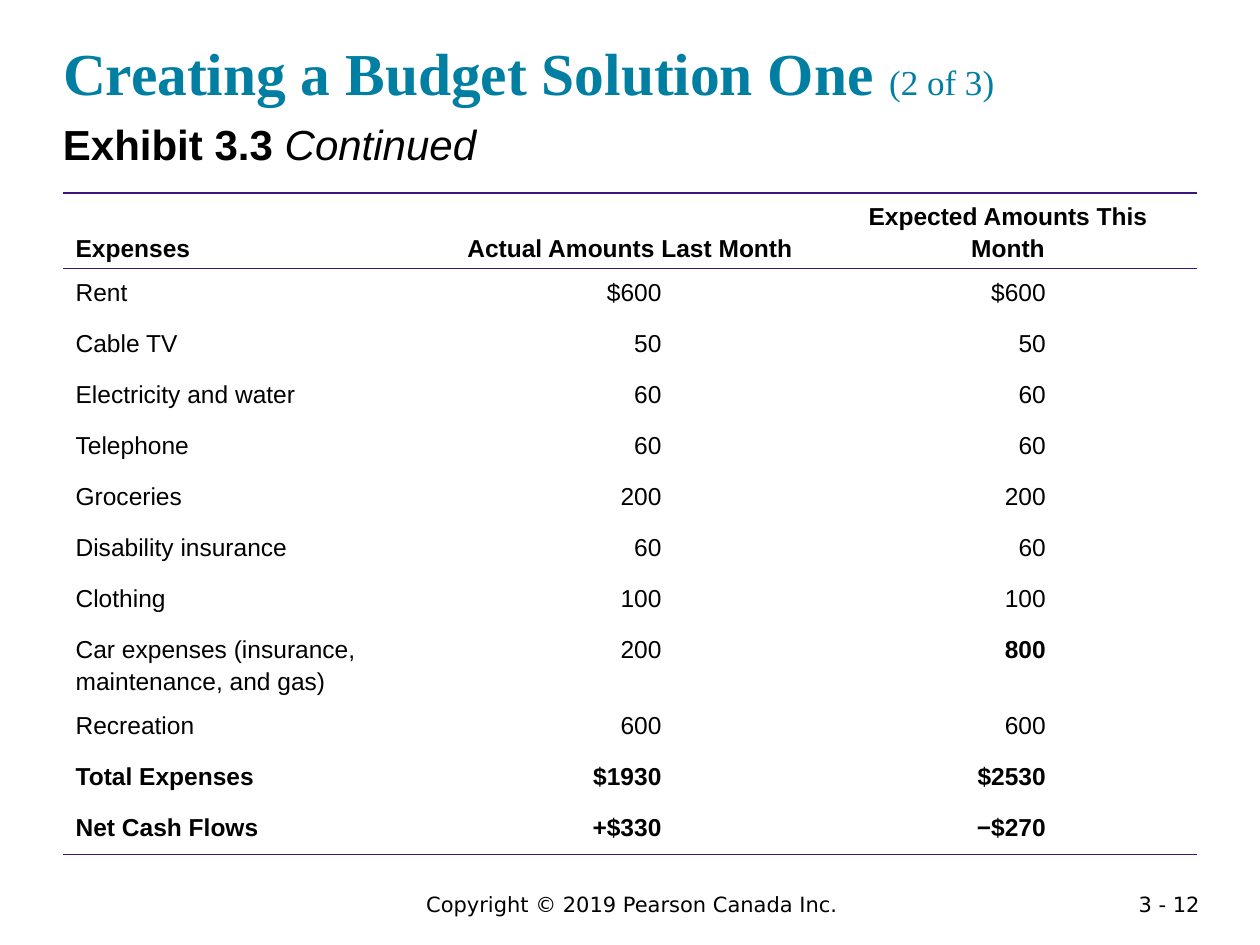
from lxml import etree
from pptx import Presentation
from pptx.dml.color import RGBColor
from pptx.enum.text import MSO_ANCHOR, MSO_AUTO_SIZE, PP_ALIGN
from pptx.oxml.ns import qn
from pptx.util import Inches, Pt

LEFT, CENTER, RIGHT = PP_ALIGN.LEFT, PP_ALIGN.CENTER, PP_ALIGN.RIGHT
TOP, BOTTOM = MSO_ANCHOR.TOP, MSO_ANCHOR.BOTTOM
NO_AUTOFIT = MSO_AUTO_SIZE.NONE
PLAIN_TABLE = "{2D5ABB26-0587-4C30-8999-92F81FD0307C}"

HEADERS = ("Expenses", "Actual Amounts Last Month", "Expected Amounts This Month")
EXPENSES = (
    ("Rent", "$600", "$600"),
    ("Cable TV", "50", "50"),
    ("Electricity and water", "60", "60"),
    ("Telephone", "60", "60"),
    ("Groceries", "200", "200"),
    ("Disability insurance", "60", "60"),
    ("Clothing", "100", "100"),
    ("Car expenses (insurance, maintenance, and gas)", "200", "800"),
    ("Recreation", "600", "600"),
    ("Total Expenses", "$1930", "$2530"),
    ("Net Cash Flows", "+$330", "−$270"),
)
TOTALS = ("Total Expenses", "Net Cash Flows")
CHANGED_AMOUNT = "800"
RIGHT_INSETS = (0.1, 1.25, 1.2)


def color(value):
    return RGBColor.from_string(value)


class BudgetSlide:
    heading_font = "Times New Roman"
    body_font = "Arial"
    footer_font = "DejaVu Sans"
    teal = "007FA3"
    purple = "3C1581"
    black = "000000"

    def __init__(self, deck):
        self.page = deck.slides.add_slide(deck.slide_layouts[5])

    def span(self, para, text, size, font, fill, bold=False, italic=False):
        span = para.add_run()
        span.text = text
        span.font.size = Pt(size)
        span.font.name = font
        span.font.bold = bold
        span.font.italic = italic
        span.font.color.rgb = color(fill)

    def frame(self, box, align, inset):
        frame = box.text_frame
        frame.word_wrap = True
        frame.auto_size = NO_AUTOFIT
        frame.margin_left = frame.margin_right = Inches(inset)
        frame.margin_top = frame.margin_bottom = Inches(inset / 2)
        para = frame.paragraphs[0]
        para.alignment = align
        return frame, para

    def title(self, text, part):
        box = self.page.shapes.title
        box.left, box.top = Inches(0.5), Inches(0.25)
        box.width, box.height = Inches(9), Inches(0.6)
        frame, para = self.frame(box, LEFT, 0)
        frame.vertical_anchor = BOTTOM
        self.span(para, text, 34, self.heading_font, self.teal, bold=True)
        self.span(para, part, 20, self.heading_font, self.teal)

    def text(self, left, top, width, height, align=LEFT, inset=0.1):
        box = self.page.shapes.add_textbox(
            Inches(left), Inches(top), Inches(width), Inches(height))
        return self.frame(box, align, inset)[1]

    def exhibit(self, label, note):
        para = self.text(0.5, 0.94, 9, 0.5, inset=0)
        self.span(para, label, 24, self.body_font, self.black, bold=True)
        self.span(para, note, 24, self.body_font, self.black, italic=True)

    def footer(self, text, left, width, align):
        para = self.text(left, 7.03, width, 0.3, align)
        self.span(para, text, 12, self.footer_font, self.black)

    def rule(self, cell, *sides):
        properties = cell._tc.get_or_add_tcPr()
        for position, side in enumerate(sides):
            line = etree.Element(qn(f"a:{side}"), w=str(Pt(1)))
            fill = etree.SubElement(line, qn("a:solidFill"))
            etree.SubElement(fill, qn("a:srgbClr"), val=self.purple)
            properties.insert(position, line)

    def cell(self, cell, text, align, anchor, bold, right_inset):
        cell.fill.background()
        cell.vertical_anchor = anchor
        cell.margin_right = Inches(right_inset)
        para = cell.text_frame.paragraphs[0]
        para.alignment = align
        para.line_spacing = 1.15
        self.span(para, text, 14, self.body_font, self.black, bold)

    def table(self, headers, rows):
        count = len(rows) + 1
        table = self.page.shapes.add_table(
            count, len(headers), Inches(0.5), Inches(1.53),
            Inches(9), Inches(4.86)).table
        table.first_row = table.horz_banding = False
        table._tbl.tblPr.find(qn("a:tableStyleId")).text = PLAIN_TABLE
        for column, header in enumerate(headers):
            cell = table.cell(0, column)
            self.cell(cell, header, CENTER if column else LEFT, BOTTOM, True, 0.1)
            self.rule(cell, "lnT", "lnB")
        for number, row in enumerate(rows, 1):
            for column, text in enumerate(row):
                bold = row[0] in TOTALS or text == CHANGED_AMOUNT
                self.cell(table.cell(number, column), text,
                          RIGHT if column else LEFT, TOP, bold, RIGHT_INSETS[column])
        for column in range(len(headers)):
            self.rule(table.cell(count - 1, column), "lnB")


def main():
    deck = Presentation()
    deck.slide_width, deck.slide_height = Inches(10), Inches(7.5)
    slide = BudgetSlide(deck)
    slide.footer("Copyright © 2019 Pearson Canada Inc.", 1.64, 6.75, CENTER)
    slide.footer("3 - 12", 8.62, 1, RIGHT)
    slide.title("Creating a Budget Solution One ", "(2 of 3)")
    slide.exhibit("Exhibit 3.3 ", "Continued")
    slide.table(HEADERS, EXPENSES)
    deck.save("out.pptx")


if __name__ == "__main__":
    main()
